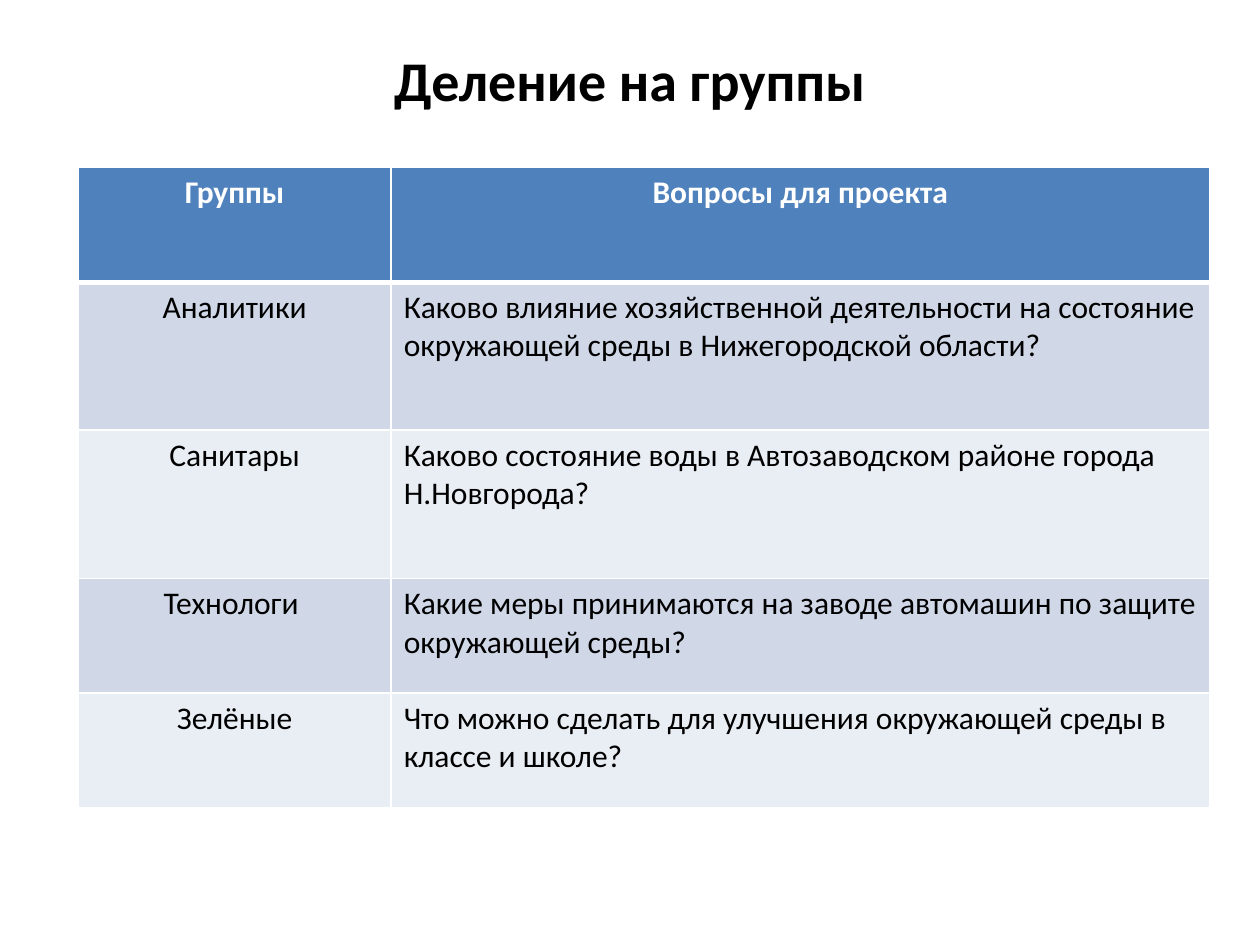
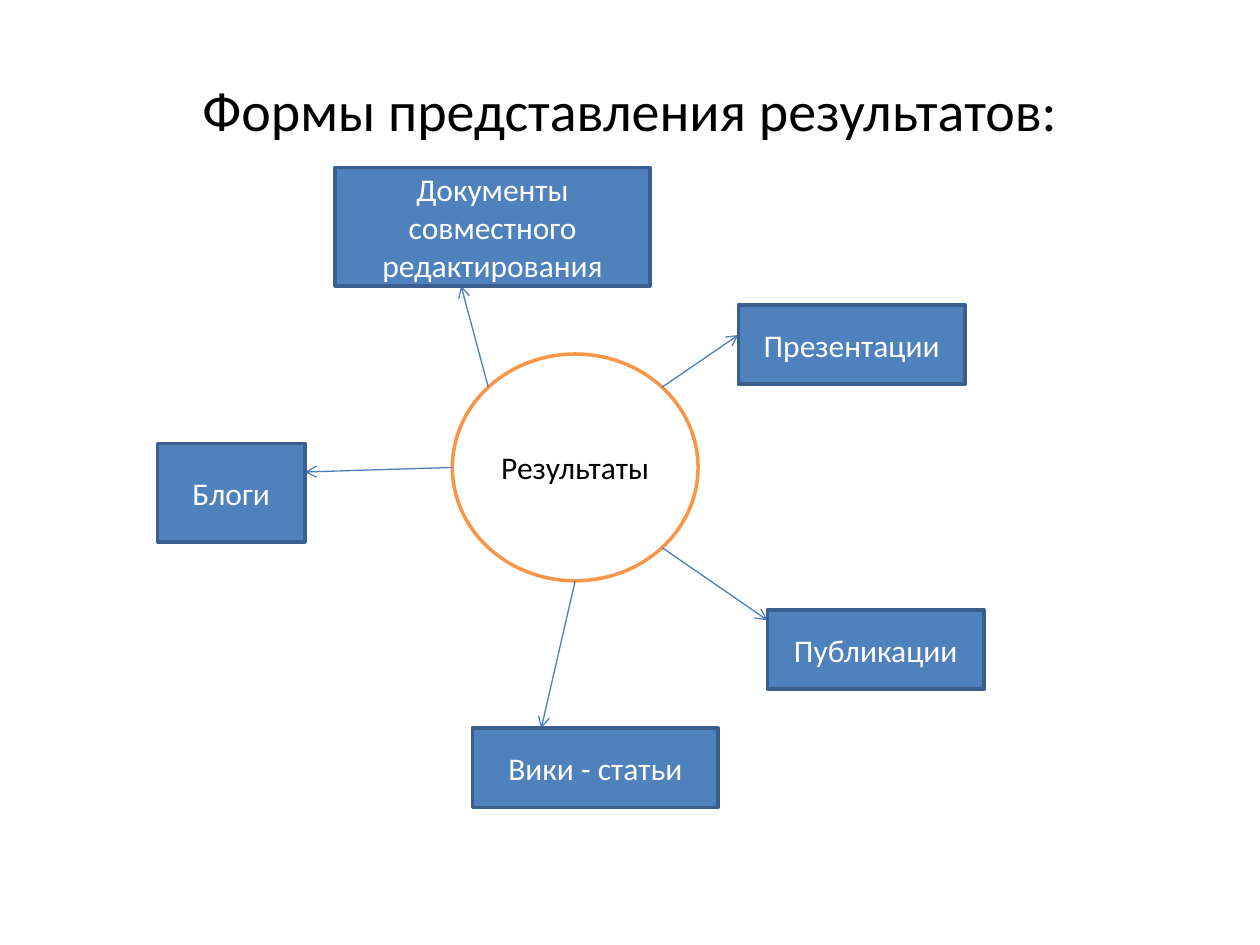
import math
from lxml import etree
from pptx import Presentation
from pptx import util as u
from pptx.dml.color import RGBColor
from pptx.enum import shapes, text
from pptx.oxml import ns

FONT = "Calibri"
WHITE, BLACK = "FFFFFF", "000000"
BLUE, DARK_BLUE, ARROW_BLUE, ORANGE = "4F81BD", "3A5F8C", "4B7EBC", "F79646"
BANDS = ["D0D8E8", "E9EDF4"]
TITLE_ONLY = 5
CENTER, LEFT = text.PP_ALIGN.CENTER, text.PP_ALIGN.LEFT

GROUPS = [
    ("Группы", "Вопросы для проекта"),
    ("Аналитики", "Каково влияние хозяйственной деятельности на состояние "
                  "окружающей среды в Нижегородской области?"),
    ("Санитары", "Каково состояние воды в Автозаводском районе города Н.Новгорода?"),
    ("Технологи ", "Какие меры принимаются на заводе автомашин по защите окружающей среды?"),
    ("Зелёные", "Что можно сделать для улучшения окружающей среды в классе и школе?"),
]
COLUMN_WIDTHS = [24.85, 64.95]
ROW_HEIGHTS = [9.1, 11.75, 11.75, 9.1, 9.1]

HUB = (35.9, 28.1, 19.5, 18)
FORMS = [
    ("Презентации", (58.6, 24.2, 18, 6.3), -45, (0, 0.38)),
    ("Публикации", (60.9, 48.4, 17.2, 6.3), 45, (0, 0.13)),
    ("Вики - статьи", (37.5, 57.8, 19.5, 6.3), 90, (0.28, 0)),
    ("Блоги", (12.5, 35.2, 11.7, 7.8), 180, (1, 0.29)),
    ("Документы совместного редактирования", (26.6, 13.3, 25, 9.4), 225, (0.4, 1)),
]


def grid(*lengths):
    return [u.Inches(length / 10) for length in lengths]


def color(value):
    return RGBColor.from_string(value)


def write(frame, words, size, ink, align=CENTER, bold=False):
    frame.word_wrap = True
    para = frame.paragraphs[0]
    para.alignment = align
    span = para.add_run()
    span.text = words
    span.font.name, span.font.size, span.font.bold = FONT, u.Pt(size), bold
    span.font.color.rgb = color(ink)


def add_page(deck, title, top, bold=False):
    page = deck.slides.add_slide(deck.slide_layouts[TITLE_ONLY])
    box = page.shapes.title
    box.left, box.top, box.width, box.height = grid(5, top, 90, 7.5)
    box.text_frame.vertical_anchor = text.MSO_ANCHOR.TOP
    write(box.text_frame, title, 32, BLACK, bold=bold)
    return page


def set_borders(cell, bottom):
    properties = cell._tc.get_or_add_tcPr()
    for side, width in (("L", 1), ("R", 1), ("T", 1), ("B", bottom)):
        line = etree.SubElement(properties, ns.qn(f"a:ln{side}"), w=str(u.Pt(width)))
        fill = etree.SubElement(line, ns.qn("a:solidFill"))
        etree.SubElement(fill, ns.qn("a:srgbClr"), val=WHITE)


def add_groups_table(page, left, top):
    area = grid(left, top, sum(COLUMN_WIDTHS), sum(ROW_HEIGHTS))
    table = page.shapes.add_table(len(GROUPS), len(COLUMN_WIDTHS), *area).table
    for column, width in zip(table.columns, grid(*COLUMN_WIDTHS)):
        column.width = width
    for row, height in zip(table.rows, grid(*ROW_HEIGHTS)):
        row.height = height
    for r, texts in enumerate(GROUPS):
        header = r == 0
        for c, words in enumerate(texts):
            cell = table.cell(r, c)
            set_borders(cell, 3 if header else 1)
            cell.fill.solid()
            cell.fill.fore_color.rgb = color(BLUE if header else BANDS[(r - 1) % 2])
            write(cell.text_frame, words, 18, WHITE if header else BLACK,
                  CENTER if header or c == 0 else LEFT, header)


def add_node(page, kind, area, words, fill, outline, ink):
    node = page.shapes.add_shape(kind, *grid(*area))
    node.shadow.inherit = False
    node.fill.solid()
    node.fill.fore_color.rgb = color(fill)
    node.line.color.rgb = color(outline)
    node.line.width = u.Pt(2)
    node.text_frame.vertical_anchor = text.MSO_ANCHOR.MIDDLE
    write(node.text_frame, words, 18, ink)


def add_arrow(page, start, end):
    arrow = page.shapes.add_connector(shapes.MSO_CONNECTOR.STRAIGHT, *grid(*start, *end))
    arrow.line.color.rgb = color(ARROW_BLUE)
    arrow.line.width = u.Pt(0.75)
    etree.SubElement(arrow.line._get_or_add_ln(), ns.qn("a:tailEnd"), type="arrow")
    etree.SubElement(arrow._element.spPr, ns.qn("a:effectLst"))


def point_in(area, across, down):
    left, top, width, height = area
    return left + width * across, top + height * down


def hub_edge(degrees):
    angle = math.radians(degrees)
    return point_in(HUB, 0.5 + math.cos(angle) / 2, 0.5 + math.sin(angle) / 2)


def add_results_map(page):
    add_node(page, shapes.MSO_SHAPE.OVAL, HUB, "Результаты", WHITE, ORANGE, BLACK)
    for words, area, degrees, arrival in FORMS:
        add_arrow(page, hub_edge(degrees), point_in(area, *arrival))
        add_node(page, shapes.MSO_SHAPE.RECTANGLE, area, words, BLUE, DARK_BLUE, WHITE)


def main():
    deck = Presentation()
    deck.slide_width, deck.slide_height = grid(100, 75)
    add_groups_table(add_page(deck, "Деление на группы", 3.1, bold=True), 6.2, 13.3)
    add_results_map(add_page(deck, "Формы представления результатов:", 5.5))
    deck.save("out.pptx")


if __name__ == "__main__":
    main()
